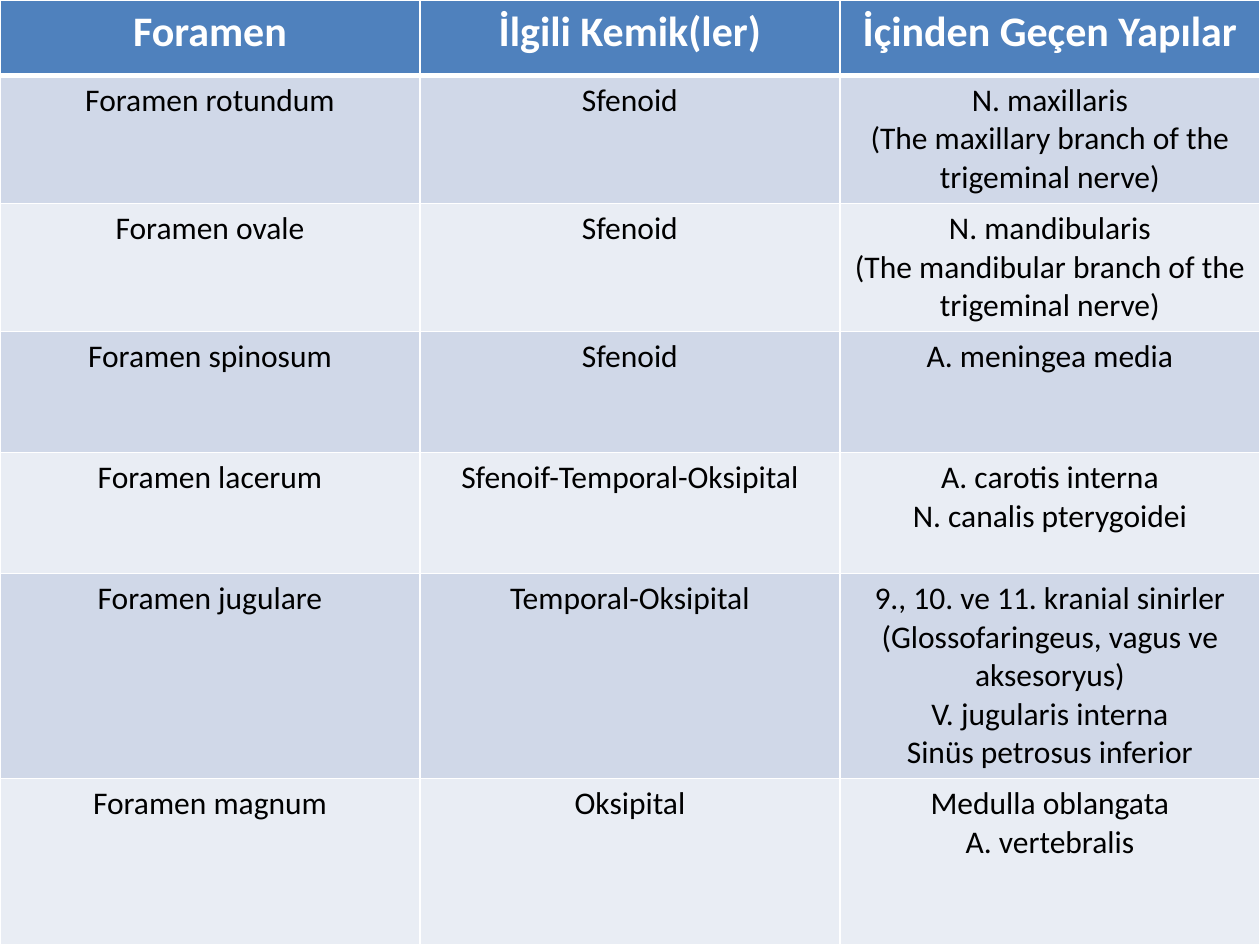
from lxml import etree
from pptx import Presentation
from pptx.dml.color import RGBColor
from pptx.enum import text
from pptx.oxml import ns
from pptx.util import Pt

WHITE, BLACK, HEADER_BLUE = "FFFFFF", "000000", "4F81BD"
BANDS = ["D0D8E8", "E9EDF4"]
HANGING = 27
ROW_HEIGHTS = [43, 73.2, 73.2, 69.2, 69.2, 117.2, 95]

HEADINGS = ["Foramen", "İlgili Kemik(ler)", "İçinden Geçen Yapılar"]
FORAMINA = [
    ("Foramen rotundum", "Sfenoid",
     "N. maxillaris\n(The maxillary branch of the trigeminal nerve)"),
    ("Foramen ovale", "Sfenoid",
     "N. mandibularis\n(The mandibular branch of the trigeminal nerve)"),
    ("Foramen spinosum", "Sfenoid", "A. meningea media"),
    ("Foramen lacerum", "Sfenoif-Temporal-Oksipital",
     "A. carotis interna\nN. canalis pterygoidei"),
    ("Foramen jugulare", "Temporal-Oksipital",
     "9., 10. ve 11. kranial sinirler\n(Glossofaringeus, vagus ve aksesoryus)\n"
     "V. jugularis interna\nSinüs petrosus inferior"),
    ("Foramen magnum", "Oksipital", "Medulla oblangata\nA. vertebralis"),
]
HANGING_LINES = {"A. carotis interna", "N. canalis pterygoidei", "A. vertebralis"}


def rgb(value):
    return RGBColor.from_string(value)


def set_borders(cell, widths):
    """Draw white borders; widths maps a side (L, R, T, B) to points."""
    properties = cell._tc.get_or_add_tcPr()
    for position, (side, width) in enumerate(widths.items()):
        line = etree.Element(ns.qn(f"a:ln{side}"), w=str(Pt(width)))
        fill = etree.SubElement(line, ns.qn("a:solidFill"))
        etree.SubElement(fill, ns.qn("a:srgbClr"), val=WHITE)
        properties.insert(position, line)


def fill_cell(cell, content, fill, borders, font):
    cell.fill.solid()
    cell.fill.fore_color.rgb = rgb(fill)
    set_borders(cell, borders)
    cell.text = content
    for paragraph in cell.text_frame.paragraphs:
        paragraph.alignment = text.PP_ALIGN.CENTER
        if paragraph.text in HANGING_LINES:
            indents = paragraph._p.get_or_add_pPr()
            indents.set("marL", str(Pt(HANGING)))
            indents.set("indent", str(-Pt(HANGING)))
        for run in paragraph.runs:
            for attribute, value in font.items():
                setattr(run.font, attribute, value)
            run.font.color.rgb = rgb(WHITE if font["bold"] else BLACK)


def add_foramen_table(slide, left, top, width, row_heights):
    rows = [HEADINGS, *FORAMINA]
    table = slide.shapes.add_table(
        len(rows), len(HEADINGS), Pt(left), Pt(top), Pt(width), Pt(sum(row_heights))).table
    for column in table.columns:
        column.width = Pt(width / len(HEADINGS))
    for index, (contents, height) in enumerate(zip(rows, row_heights)):
        table.rows[index].height = Pt(height)
        is_header = index == 0
        fill = HEADER_BLUE if is_header else BANDS[(index - 1) % 2]
        font = {"name": "Calibri", "size": Pt(24 if is_header else 18), "bold": is_header}
        borders = {"L": 1, "R": 1, "T": 3 if index == 1 else 1, "B": 3 if is_header else 1}
        for cell, content in zip(table.rows[index].cells, contents):
            fill_cell(cell, content, fill, borders, font)


def main():
    presentation = Presentation()
    presentation.slide_width, presentation.slide_height = Pt(720), Pt(540)
    slide = presentation.slides.add_slide(presentation.slide_layouts[6])
    add_foramen_table(slide, 0, 0, 720, ROW_HEIGHTS)
    presentation.save("out.pptx")


if __name__ == "__main__":
    main()
